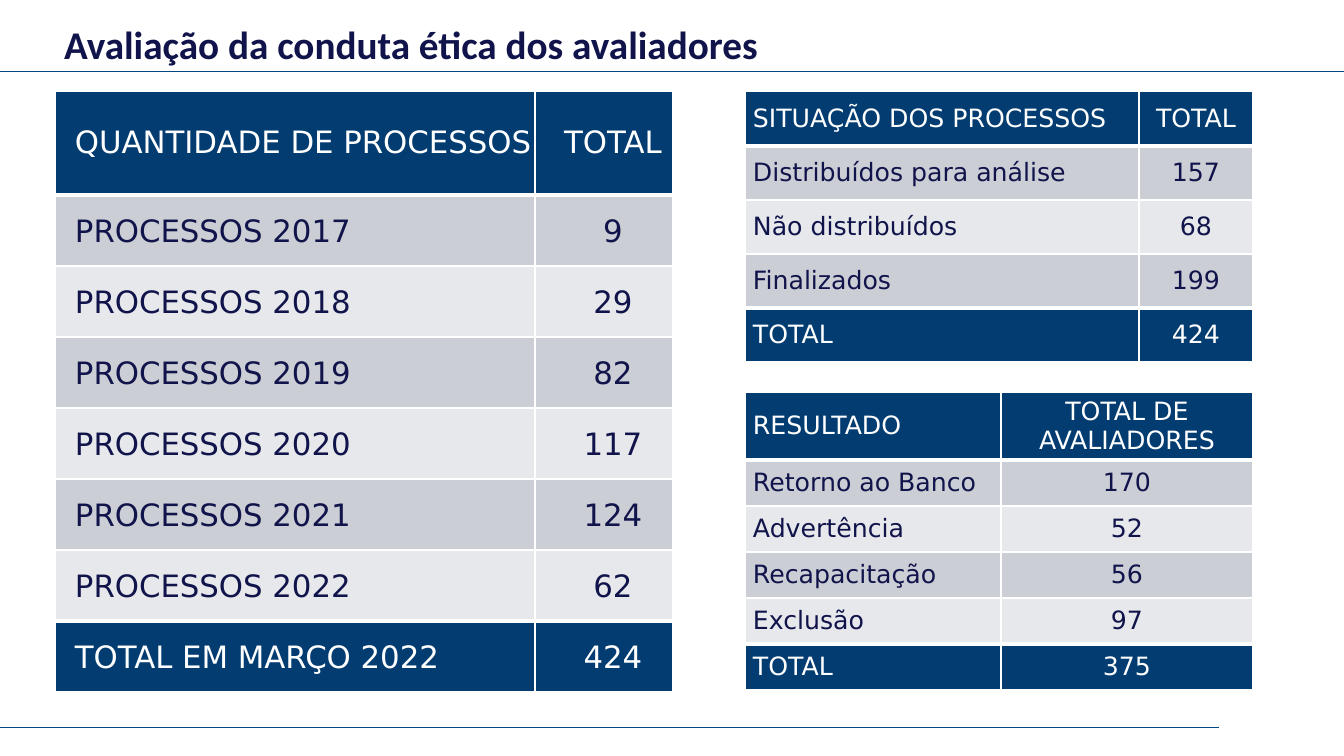
import pptx
import pptx.dml.color
import pptx.enum.shapes
import pptx.enum.text
import pptx.oxml.ns
import pptx.util
from lxml import etree

SLIDE_WIDTH, SLIDE_HEIGHT = 1344, 756
EMU_PER_PX = 12192000 / SLIDE_WIDTH

NAVY, INK, WHITE = "023C71", "11144B", "FFFFFF"
BANDS = ["CCCED5", "E7E8EB"]
RULE_BLUE = "044785"

MIDDLE = pptx.enum.text.MSO_ANCHOR.MIDDLE
BOTTOM = pptx.enum.text.MSO_ANCHOR.BOTTOM
LEFT = pptx.enum.text.PP_ALIGN.LEFT
CENTER = pptx.enum.text.PP_ALIGN.CENTER

PROCESSES = [
    ("QUANTIDADE DE PROCESSOS", "TOTAL"),
    ("PROCESSOS 2017", "9"),
    ("PROCESSOS 2018", "29"),
    ("PROCESSOS 2019", "82"),
    ("PROCESSOS 2020", "117"),
    ("PROCESSOS 2021", "124"),
    ("PROCESSOS 2022", "62"),
    ("TOTAL EM MARÇO 2022", "424"),
]
STATUS = [
    ("SITUAÇÃO DOS PROCESSOS", "TOTAL"),
    ("Distribuídos para análise", "157"),
    ("Não distribuídos", "68"),
    ("Finalizados", "199"),
    ("TOTAL", "424"),
]
RESULTS = [
    ("RESULTADO", "TOTAL DE AVALIADORES"),
    ("Retorno ao Banco", "170"),
    ("Advertência", "52"),
    ("Recapacitação", "56"),
    ("Exclusão", "97"),
    ("TOTAL", "375"),
]


def px(length):
    return pptx.util.Emu(round(length * EMU_PER_PX))


def color(hex_string):
    return pptx.dml.color.RGBColor.from_string(hex_string)


def style_font(font, name, size, hex_string, bold=False):
    font.name = name
    font.size = pptx.util.Pt(size)
    font.bold = bold
    font.color.rgb = color(hex_string)


def add_title(slide, text, left, top, width, height):
    title = slide.shapes.title
    title.left, title.top = px(left), px(top)
    title.width, title.height = px(width), px(height)
    frame = title.text_frame
    frame.text = text
    frame.word_wrap = True
    frame.vertical_anchor = MIDDLE
    paragraph = frame.paragraphs[0]
    paragraph.alignment = LEFT
    style_font(paragraph.font, "Calibri", 28, INK, bold=True)


def add_rule(slide, y, right):
    """Draw a thin horizontal line from the left edge of the slide."""
    rule = slide.shapes.add_connector(
        pptx.enum.shapes.MSO_CONNECTOR.STRAIGHT, 0, px(y), px(right), px(y))
    rule.line.color.rgb = color(RULE_BLUE)
    rule.line.width = pptx.util.Pt(0.5)
    etree.SubElement(rule._element.spPr, pptx.oxml.ns.qn("a:effectLst"))


def set_borders(cell, top, bottom):
    """Give the cell white borders, 1 pt at the sides; must precede its fill."""
    properties = cell._tc.get_or_add_tcPr()
    for edge, points in (("L", 1), ("R", 1), ("T", top), ("B", bottom)):
        line = etree.SubElement(properties, pptx.oxml.ns.qn(f"a:ln{edge}"),
                                w=str(pptx.util.Pt(points)))
        fill = etree.SubElement(line, pptx.oxml.ns.qn("a:solidFill"))
        etree.SubElement(fill, pptx.oxml.ns.qn("a:srgbClr"), val=WHITE)


def fill_cell(cell, text, alignment, anchor, insets, size, fill, ink):
    cell.fill.solid()
    cell.fill.fore_color.rgb = color(fill)
    cell.vertical_anchor = anchor
    (cell.margin_left, cell.margin_top,
     cell.margin_right, cell.margin_bottom) = map(px, insets)
    cell.text = text
    paragraph = cell.text_frame.paragraphs[0]
    paragraph.alignment = alignment
    style_font(paragraph.font, "DejaVu Sans", size, ink)


def add_totals_table(slide, rows, left, top, widths, header_height, row_height,
                     size=18, insets=(8, 4, 8, 4), body_anchor=MIDDLE):
    """Add a banded table whose header and total rows are navy."""
    last = len(rows) - 1
    height = header_height + last * row_height
    table = slide.shapes.add_table(len(rows), len(widths), px(left), px(top),
                                   px(sum(widths)), px(height)).table
    table.first_row = table.horz_banding = False
    for column, width in zip(table.columns, widths):
        column.width = px(width)
    for index, values in enumerate(rows):
        table.rows[index].height = px(row_height if index else header_height)
        navy = index in (0, last)
        fill = NAVY if navy else BANDS[(index - 1) % 2]
        anchor = body_anchor if index else MIDDLE
        top_border = 3 if index in (1, last) else 1
        bottom_border = 3 if index in (0, last - 1) else 1
        for column, (text, alignment) in enumerate(zip(values, (LEFT, CENTER))):
            cell = table.cell(index, column)
            set_borders(cell, top_border, bottom_border)
            fill_cell(cell, text, alignment, anchor, insets, size, fill,
                      WHITE if navy else INK)


def main():
    presentation = pptx.Presentation()
    presentation.slide_width = px(SLIDE_WIDTH)
    presentation.slide_height = px(SLIDE_HEIGHT)
    slide = presentation.slides.add_slide(presentation.slide_layouts[5])

    add_rule(slide, 727, 1219)
    add_rule(slide, 71, SLIDE_WIDTH)
    add_title(slide, "Avaliação da conduta ética dos avaliadores", 54, 15, 866, 58)
    add_totals_table(slide, PROCESSES, 55, 91, (480, 138), 104, 71, size=22,
                     insets=(20, 16, 2, 16), body_anchor=BOTTOM)
    add_totals_table(slide, RESULTS, 745, 392, (256, 252), 68, 46)
    add_totals_table(slide, STATUS, 745, 91, (394, 114), 55, 54)

    presentation.save("out.pptx")


if __name__ == "__main__":
    main()
